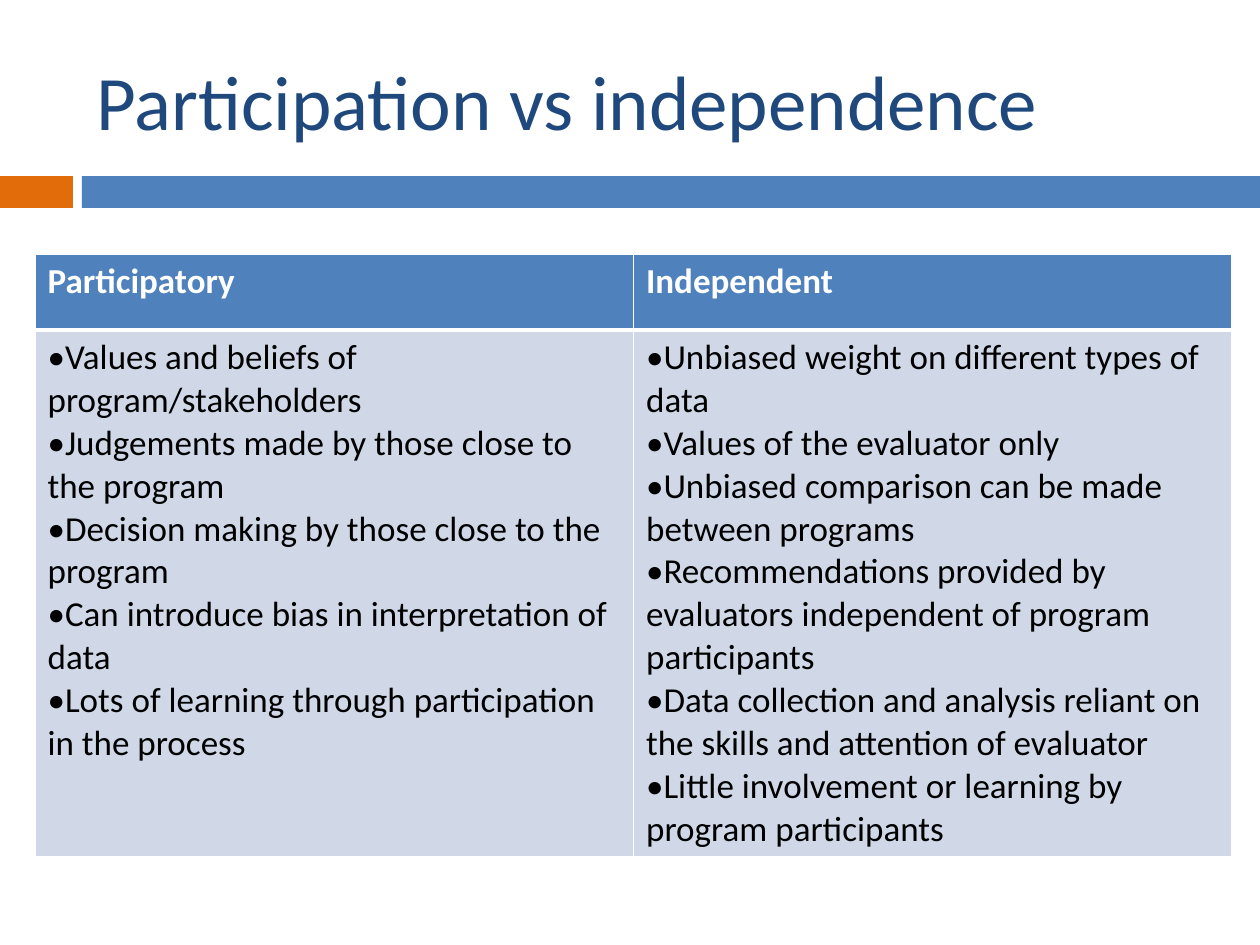
from lxml.etree import SubElement
from pptx import Presentation
from pptx.dml.color import RGBColor
from pptx.enum.shapes import MSO_SHAPE
from pptx.enum.text import MSO_ANCHOR, PP_ALIGN
from pptx.oxml.ns import qn
from pptx.util import Pt

EMU_PER_PX = 914400 / 126
WHITE, BLUE, ORANGE = "FFFFFF", "4F81BD", "E36C0A"
NAVY, PALE, BLACK = "1F497D", "D0D8E8", "000000"

COMPARISON = {
    "Participatory": [
        "Values and beliefs of program/stakeholders",
        "Judgements made by those close to the program",
        "Decision making by those close to the program",
        "Can introduce bias in interpretation of data",
        "Lots of learning through participation in the process",
    ],
    "Independent": [
        "Unbiased weight on different types of data",
        "Values of the evaluator only",
        "Unbiased comparison can be made between programs",
        "Recommendations provided by evaluators independent of program participants",
        "Data collection and analysis reliant on the skills and attention of evaluator",
        "Little involvement or learning by program participants",
    ],
}


def px(length):
    return round(length * EMU_PER_PX)


def rgb(value):
    return RGBColor.from_string(value)


class ComparisonSlide:
    """Hold the style and the current slide, and add its elements."""

    font_name = "Calibri"

    def __init__(self, deck):
        self.slide = deck.slides.add_slide(deck.slide_layouts[5])

    def format_text(self, paragraph, size, color, bold=False):
        formats = {"name": self.font_name, "size": Pt(size), "bold": bold}
        for run in paragraph.runs:
            for attribute, value in formats.items():
                setattr(run.font, attribute, value)
            run.font.color.rgb = rgb(color)

    def bar(self, left, top, width, height, color):
        bar = self.slide.shapes.add_shape(
            MSO_SHAPE.RECTANGLE, px(left), px(top), px(width), px(height))
        bar.shadow.inherit = False
        bar.fill.solid()
        bar.fill.fore_color.rgb = rgb(color)
        bar.line.fill.background()

    def title(self, text, left, top, width, height):
        heading = self.slide.shapes.title
        place = {"left": left, "top": top, "width": width, "height": height}
        for attribute, value in place.items():
            setattr(heading, attribute, px(value))
        heading.text_frame.text = text
        heading.text_frame.vertical_anchor = MSO_ANCHOR.MIDDLE
        paragraph = heading.text_frame.paragraphs[0]
        paragraph.alignment = PP_ALIGN.LEFT
        self.format_text(paragraph, 44, NAVY)

    def borders(self, cell, widths):
        properties = cell._tc.get_or_add_tcPr()
        for side, width in widths.items():
            line = SubElement(properties, qn(f"a:ln{side}"), w=str(Pt(width)))
            fill = SubElement(line, qn("a:solidFill"))
            SubElement(fill, qn("a:srgbClr"), val=WHITE)

    def bullet(self, paragraph, symbol):
        properties = paragraph._p.get_or_add_pPr()
        SubElement(properties, qn("a:buFont"), typeface=self.font_name)
        SubElement(properties, qn("a:buChar"), char=symbol)

    def cell(self, cell, lines, fill, color, widths, bold=False, symbol=None):
        self.borders(cell, widths)
        cell.fill.solid()
        cell.fill.fore_color.rgb = rgb(fill)
        cell.text_frame.text = "\n".join(lines)
        for paragraph in cell.text_frame.paragraphs:
            self.format_text(paragraph, 20, color, bold)
            if symbol:
                self.bullet(paragraph, symbol)

    def table(self, columns, left, top, width, row_heights):
        table = self.slide.shapes.add_table(
            len(row_heights), len(columns), px(left), px(top),
            px(width), px(sum(row_heights))).table
        table.horz_banding = False
        for row, height in zip(table.rows, row_heights):
            row.height = px(height)
        for index, (heading, points) in enumerate(columns.items()):
            table.columns[index].width = px(width / len(columns))
            self.cell(table.cell(0, index), [heading], BLUE, WHITE,
                      {"L": 1, "R": 1, "T": 1, "B": 3}, bold=True)
            self.cell(table.cell(1, index), points, PALE, BLACK,
                      {"L": 1, "R": 1, "T": 3, "B": 1}, symbol="•")


def main():
    deck = Presentation()
    deck.slide_width, deck.slide_height = px(1260), px(945)
    page = ComparisonSlide(deck)
    page.bar(0, 176, 73, 32, ORANGE)
    page.bar(82, 176, 1178, 32, BLUE)
    page.title("Participation vs independence", 84, 32, 1124, 136)
    page.table(COMPARISON, 35, 254, 1197, [76, 499])
    deck.save("out.pptx")


if __name__ == "__main__":
    main()
